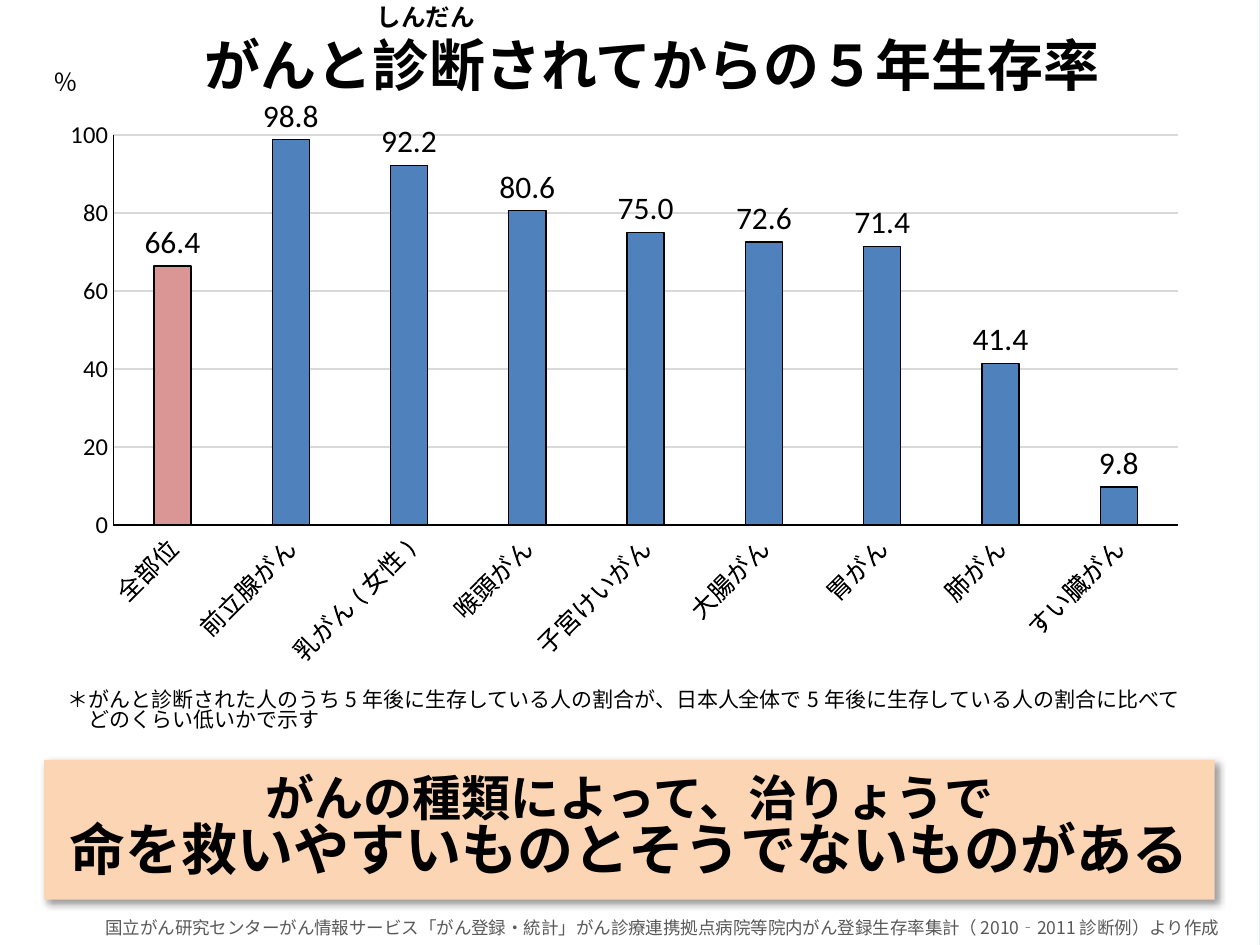
from lxml import etree
from pptx import Presentation
from pptx.chart.data import CategoryChartData
from pptx.dml.color import RGBColor
from pptx.enum.chart import XL_CHART_TYPE, XL_LABEL_POSITION, XL_TICK_MARK
from pptx.enum.shapes import MSO_SHAPE
from pptx.enum.text import MSO_ANCHOR, PP_ALIGN
from pptx.oxml import parse_xml
from pptx.oxml.ns import nsdecls, qn
from pptx.util import Inches, Pt

COLUMNS = XL_CHART_TYPE.COLUMN_CLUSTERED
OUTSIDE = XL_LABEL_POSITION.OUTSIDE_END
NO_TICK = XL_TICK_MARK.NONE
RECTANGLE = MSO_SHAPE.RECTANGLE
TOP, MIDDLE = MSO_ANCHOR.TOP, MSO_ANCHOR.MIDDLE
LEFT, CENTER = PP_ALIGN.LEFT, PP_ALIGN.CENTER

JAPANESE, LATIN = "Noto Sans CJK JP", "Calibri"
BLACK, WHITE, GREY = "000000", "FFFFFF", "595959"
PEACH, BLUE, PINK, GRID = "FCD5B5", "4F81BD", "D99694", "D9D9D9"

TITLE = "がんと診断されてからの５年生存率"
MESSAGE = ["がんの種類によって、治りょうで", "命を救いやすいものとそうでないものがある"]
NOTE = [
    "＊がんと診断された人のうち5年後に生存している人の割合が、日本人全体で5年後に生存している人の割合に比べて",
    "　どのくらい低いかで示す",
]
CREDIT = ["国立がん研究センターがん情報サービス「がん登録・統計」がん診療連携拠点病院等院内がん登録生存率集計"
          "（2010‐2011診断例）より作成"]
SURVIVAL = {
    "全部位": 66.4, "前立腺がん": 98.8, "乳がん(女性)": 92.2,
    "喉頭がん": 80.6, "子宮けいがん": 75.0, "大腸がん": 72.6,
    "胃がん": 71.4, "肺がん": 41.4, "すい臓がん": 9.8,
}
PLOT_AREA = {"x": 0.073, "y": 0.057, "w": 0.857, "h": 0.661}


def rgb(value):
    return RGBColor.from_string(value)


def set_font(font, size, color=BLACK, name=LATIN, bold=False):
    font.size, font.name, font.bold = Pt(size), name, bold
    font.color.rgb = rgb(color)


def set_line(line, color, width=0.75):
    line.color.rgb = rgb(color)
    line.width = Pt(width)


def write(shape, lines, sizes, color=BLACK, name=LATIN, bold=False, align=CENTER, anchor=MIDDLE):
    """Fill a shape with one paragraph per line, each at its own size."""
    frame = shape.text_frame
    frame.text = "\n".join(lines)
    frame.word_wrap = True
    frame.vertical_anchor = anchor
    for paragraph, size in zip(frame.paragraphs, sizes):
        paragraph.alignment = align
        if name == JAPANESE:
            paragraph.line_spacing = 0.83
        for run in paragraph.runs:
            set_font(run.font, size, color, name, bold)
            east_asian = etree.SubElement(run.font._element, qn("a:ea"))
            east_asian.set("typeface", JAPANESE)


def add_box(slide, box, fill):
    shape = slide.shapes.add_shape(RECTANGLE, *map(Inches, box))
    shape.shadow.inherit = False
    shape.fill.solid()
    shape.fill.fore_color.rgb = rgb(fill)
    shape.line.fill.background()
    return shape


def add_text(slide, box, lines, sizes, **style):
    write(slide.shapes.add_textbox(*map(Inches, box)), lines, sizes, **style)


def add_shadow(shape):
    effects = shape._element.spPr.find(qn("a:effectLst"))
    effects.append(parse_xml(
        f'<a:outerShdw {nsdecls("a")} blurRad="{Pt(4)}" dist="{Pt(3)}" dir="2700000" algn="tl">'
        f'<a:srgbClr val="{BLACK}"><a:alpha val="40000"/></a:srgbClr></a:outerShdw>'))


def set_plot_area(chart, fractions):
    """Fix the inner plot area as fractions of the chart frame."""
    plot_area = chart._chartSpace.chart.plotArea
    for layout in plot_area.findall(qn("c:layout")):
        plot_area.remove(layout)
    modes = "".join(f'<c:{axis}Mode val="edge"/>' for axis in "xy")
    places = "".join(f'<c:{key} val="{value}"/>' for key, value in fractions.items())
    plot_area.insert(0, parse_xml(
        f'<c:layout {nsdecls("c")}><c:manualLayout><c:layoutTarget val="inner"/>'
        f'{modes}{places}</c:manualLayout></c:layout>'))


def add_survival_chart(slide, box):
    data = CategoryChartData(number_format="0.0")
    data.categories = list(SURVIVAL)
    data.add_series("5年生存率", list(SURVIVAL.values()))
    chart = slide.shapes.add_chart(COLUMNS, *map(Inches, box), data).chart
    chart.has_legend = chart.has_title = False
    set_font(chart.font, 10)
    set_plot_area(chart, PLOT_AREA)

    for axis in (chart.category_axis, chart.value_axis):
        axis.major_tick_mark = axis.minor_tick_mark = NO_TICK
        set_font(axis.tick_labels.font, 14)
        set_line(axis.format.line, BLACK)
    values = chart.value_axis
    values.minimum_scale, values.maximum_scale, values.major_unit = 0, 100, 20
    values.tick_labels.number_format = "0"
    values.tick_labels.number_format_is_linked = False
    set_line(values.major_gridlines.format.line, GRID)

    plot = chart.plots[0]
    plot.gap_width, plot.overlap, plot.vary_by_categories = 219, -27, False
    series = plot.series[0]
    for part, color in ((series, BLUE), (series.points[0], PINK)):
        part.format.fill.solid()
        part.format.fill.fore_color.rgb = rgb(color)
        set_line(part.format.line, BLACK)
    labels = series.data_labels
    labels.show_value = True
    labels.position = OUTSIDE
    labels.number_format, labels.number_format_is_linked = "0.0", False
    set_font(labels.font, 18)


def main():
    presentation = Presentation()
    presentation.slide_width, presentation.slide_height = Inches(10), Inches(7.5)
    slide = presentation.slides.add_slide(presentation.slide_layouts[5])
    slide.background.fill.solid()
    slide.background.fill.fore_color.rgb = rgb("E1F4FF")

    backdrop = add_box(slide, (-0.04, 0, 10.02, 7.5), WHITE)
    set_line(backdrop.line, WHITE, 2)
    banner = add_box(slide, (0.35, 6.03, 9.29, 1.11), PEACH)
    add_shadow(banner)
    write(banner, MESSAGE, (28, 32), name=JAPANESE, bold=True)

    title = slide.shapes.title
    title.left, title.top, title.width, title.height = map(Inches, (0.65, 0.23, 9.06, 0.64))
    write(title, [TITLE], [32], name=JAPANESE, bold=True)
    slide.shapes._spTree.append(title._element)  # in front of the backdrop

    add_text(slide, (0.29, 0.39, 0.47, 0.52), ["％"], [14])
    add_text(slide, (2.87, -0.1, 1.02, 0.47), ["しんだん"], [14], bold=True)
    add_survival_chart(slide, (0.18, 0.77, 9.86, 4.72))
    add_text(slide, (0.44, 5.43, 9.06, 0.5), NOTE, (12, 12),
             name=JAPANESE, align=LEFT, anchor=TOP)
    add_text(slide, (0.57, 7.24, 9.37, 0.27), CREDIT, [10], color=GREY, name=JAPANESE)
    presentation.save("out.pptx")


if __name__ == "__main__":
    main()
